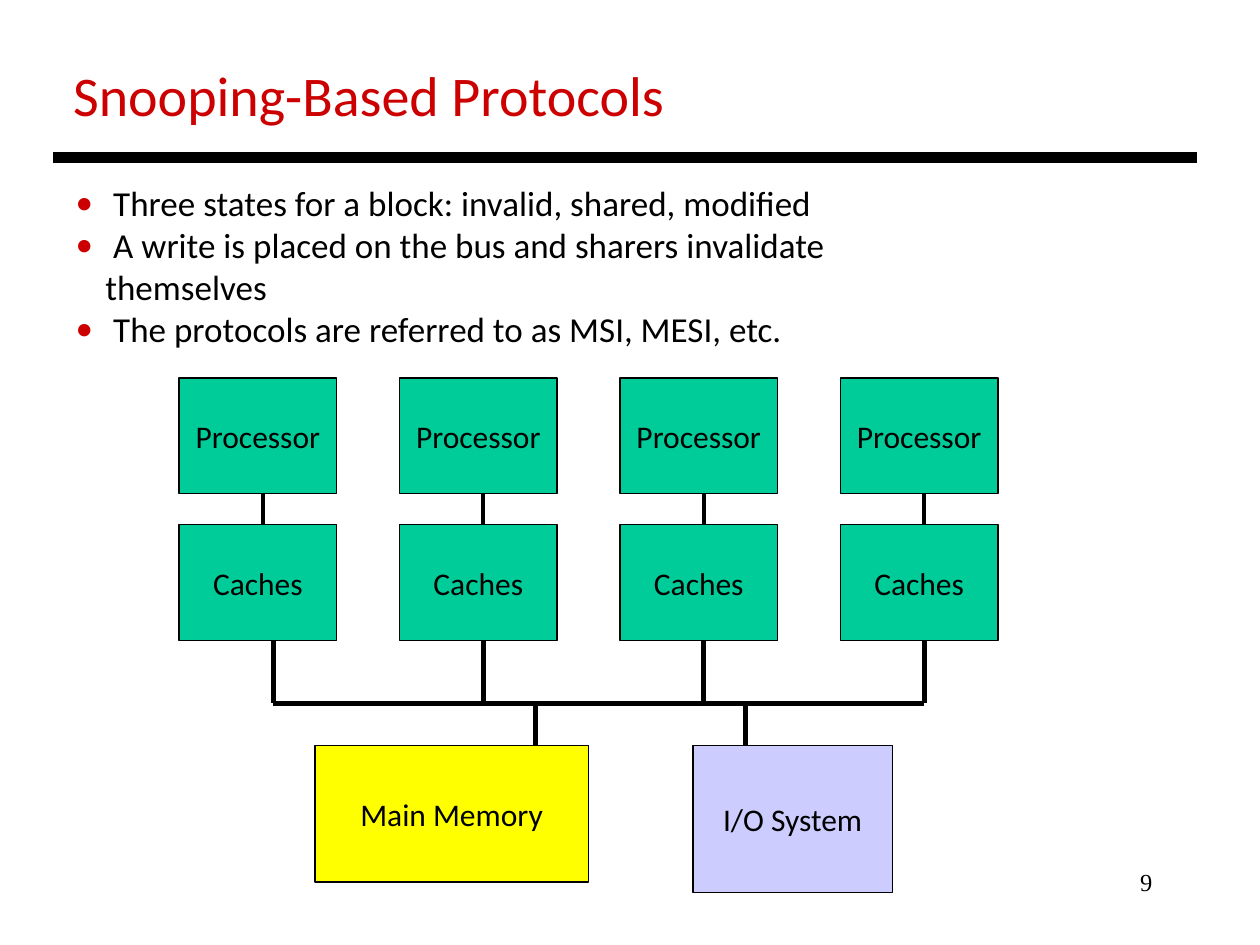
from collections import namedtuple
from dataclasses import dataclass

from lxml import etree
from pptx import Presentation
from pptx.dml.color import RGBColor
from pptx.enum.shapes import MSO_CONNECTOR, MSO_SHAPE
from pptx.enum.text import MSO_ANCHOR, MSO_AUTO_SIZE, PP_ALIGN
from pptx.oxml.ns import qn
from pptx.util import Cm, Pt

RECTANGLE = MSO_SHAPE.RECTANGLE
STRAIGHT = MSO_CONNECTOR.STRAIGHT
TOP, MIDDLE = MSO_ANCHOR.TOP, MSO_ANCHOR.MIDDLE
LEFT, CENTER, RIGHT = PP_ALIGN.LEFT, PP_ALIGN.CENTER, PP_ALIGN.RIGHT
NO_AUTOFIT = MSO_AUTO_SIZE.NONE

# All box values are centimetres
Box = namedtuple("Box", "left top width height")


@dataclass(frozen=True)
class Theme:
    font: str = "Calibri"
    number_font: str = "Times New Roman"
    ink: str = "000000"
    accent: str = "CC0000"
    node: str = "00CC99"
    memory: str = "FFFF00"
    io_system: str = "CCCCFF"
    title_size: int = 32
    body_size: int = 20
    label_size: int = 18
    number_size: int = 14
    rule_width: float = 6
    bus_width: float = 3
    link_width: float = 2.25
    outline_width: float = 0.75


THEME = Theme()


def place(shape, box):
    shape.left, shape.top, shape.width, shape.height = map(Cm, box)


def format_text(frame, size, color=THEME.ink, font=THEME.font,
                align=LEFT, anchor=TOP, wrap=True):
    frame.auto_size = NO_AUTOFIT
    frame.word_wrap = wrap
    frame.vertical_anchor = anchor
    for paragraph in frame.paragraphs:
        paragraph.alignment = align
        paragraph.space_before = Pt(0)
        for run in paragraph.runs:
            run.font.name = font
            run.font.size = Pt(size)
            run.font.color.rgb = RGBColor.from_string(color)


def add_line(slide, start, end, width):
    line = slide.shapes.add_connector(STRAIGHT, *map(Cm, (*start, *end)))
    line.line.color.rgb = RGBColor.from_string(THEME.ink)
    line.line.width = Pt(width)
    etree.SubElement(line._element.spPr, qn("a:effectLst"))


def add_node(slide, box, label, fill):
    node = slide.shapes.add_shape(RECTANGLE, *map(Cm, box))
    node.shadow.inherit = False
    node.fill.solid()
    node.fill.fore_color.rgb = RGBColor.from_string(fill)
    node.line.color.rgb = RGBColor.from_string(THEME.ink)
    node.line.width = Pt(THEME.outline_width)
    node.text_frame.text = label
    format_text(node.text_frame, THEME.label_size, align=CENTER,
                anchor=MIDDLE, wrap=False)


def add_bullet(paragraph, indent):
    properties = paragraph._p.get_or_add_pPr()
    properties.set("marL", str(Cm(indent)))
    properties.set("indent", str(-Cm(indent)))
    color = etree.SubElement(properties, qn("a:buClr"))
    etree.SubElement(color, qn("a:srgbClr"), val=THEME.accent)
    etree.SubElement(properties, qn("a:buFont"), typeface=THEME.font)
    etree.SubElement(properties, qn("a:buChar"), char="•")


def build_header(slide, box):
    title = slide.shapes.title
    place(title, Box(box.left + 0.15, box.top, 12.55, 1.63))
    title.text_frame.text = "Snooping-Based Protocols"
    format_text(title.text_frame, THEME.title_size, THEME.accent, wrap=False)
    # Rule under the title
    bottom = box.top + box.height
    add_line(slide, (box.left, bottom), (box.left + box.width, bottom),
             THEME.rule_width)


def build_points(slide, box):
    points = slide.placeholders[1]
    place(points, box)
    points.text_frame.text = "\n".join((
        " Three states for a block: invalid, shared, modified",
        " A write is placed on the bus and sharers invalidate themselves",
        " The protocols are referred to as MSI, MESI, etc.",
    ))
    format_text(points.text_frame, THEME.body_size)
    for paragraph in points.text_frame.paragraphs:
        add_bullet(paragraph, indent=0.6)


def build_bus_diagram(slide, box):
    columns, node_width, node_height = 4, 3.18, 2.33
    pitch = (box.width - node_width) / (columns - 1)
    cache_top = box.top + 2.96
    cache_bottom = cache_top + node_height
    bus_y = box.top + 6.56
    memory_top = box.top + 7.41
    link_offset, first_drop_offset = 1.69, 1.9

    # Processors, their caches and the drops to the bus
    drops = []
    for column in range(columns):
        left = box.left + column * pitch
        link_x = left + link_offset
        drop_x = left + (link_offset if column else first_drop_offset)
        drops.append(drop_x)
        for label, top in (("Processor", box.top), ("Caches", cache_top)):
            add_node(slide, Box(left, top, node_width, node_height),
                     label, THEME.node)
        add_line(slide, (link_x, box.top + node_height), (link_x, cache_top),
                 THEME.link_width)
        add_line(slide, (drop_x, cache_bottom), (drop_x, bus_y),
                 THEME.bus_width)

    # Shared bus
    add_line(slide, (drops[0], bus_y), (drops[-1], bus_y), THEME.bus_width)

    # Memory and I/O below the bus: label, fill, left, width, height, link
    for label, fill, left, width, height, link in (
        ("Main Memory", THEME.memory, 2.74, 5.51, 2.75, 4.45),
        ("I/O System", THEME.io_system, 10.36, 4.02, 2.96, 1.06),
    ):
        node = Box(box.left + left, memory_top, width, height)
        add_node(slide, node, label, fill)
        link_x = node.left + link
        add_line(slide, (link_x, bus_y), (link_x, memory_top),
                 THEME.bus_width)


def build_page_number(slide, box):
    number = slide.shapes.add_textbox(*map(Cm, box))
    number.text_frame.text = "9"
    format_text(number.text_frame, THEME.number_size,
                font=THEME.number_font, align=RIGHT)


def main():
    presentation = Presentation()
    presentation.slide_width, presentation.slide_height = Cm(25.4), Cm(19.05)
    slide = presentation.slides.add_slide(presentation.slide_layouts[1])
    build_header(slide, Box(1.07, 1.09, 23.06, 2.09))
    build_points(slide, Box(1.27, 3.53, 18.3, 3.7))
    build_bus_diagram(slide, Box(3.61, 7.62, 16.51, 10.37))
    build_page_number(slide, Box(18.2, 17.35, 5.28, 1.27))
    presentation.save("out.pptx")


if __name__ == "__main__":
    main()
